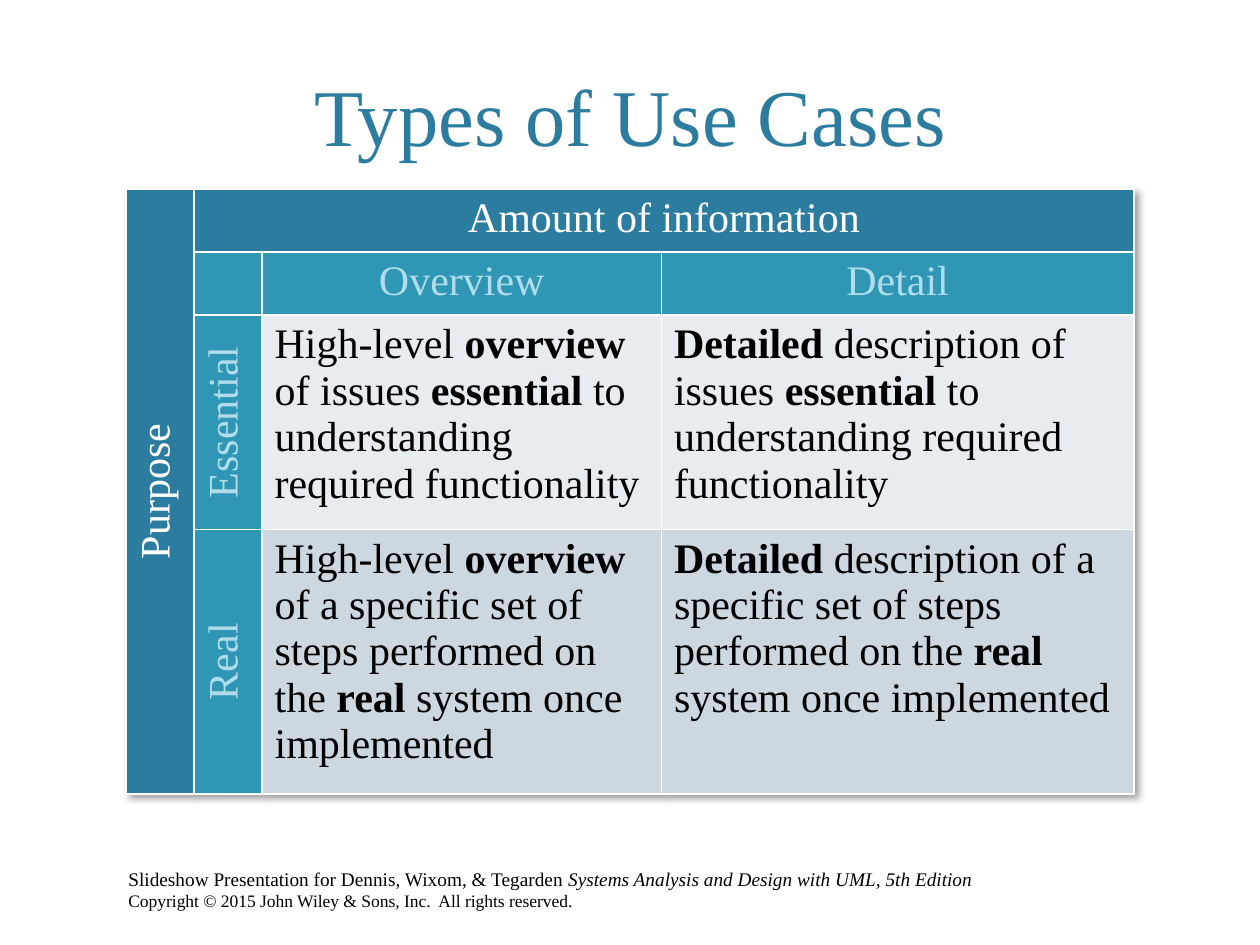
from lxml import etree
from pptx import Presentation
from pptx import util as u
from pptx.dml import color
from pptx.enum import text
from pptx.oxml import ns

W, H = 10, 7.5
FONT = "Times New Roman"
C = {"head": "2C7C9F", "sub": "2F97B5", "sub_text": "B1DDEB", "white": "FFFFFF",
     "black": "000000", "essential": "E8ECF0", "real": "CDD7DF"}
COLS = [0.54, 0.54, 3.17, 3.75]
ROWS = [0.46, 0.47, 1.57, 1.95]
HEAD = ("head", "white")
SUB = ("sub", "sub_text")
ESSENTIAL = ("essential", "black")
REAL = ("real", "black")
CELLS = [
    [("Purpose", HEAD), ("Amount of information", HEAD), ("", HEAD), ("", HEAD)],
    [("", HEAD), ("", SUB), ("Overview", SUB), ("Detail", SUB)],
    [("", HEAD), ("Essential", SUB),
     ("High-level *overview* of issues *essential* to understanding required functionality", ESSENTIAL),
     ("*Detailed* description of issues *essential* to understanding required functionality", ESSENTIAL)],
    [("", HEAD), ("Real", SUB),
     ("High-level *overview *of a specific set of steps performed on the *real* system once implemented", REAL),
     ("*Detailed* description of a specific set of steps performed on the *real* system once implemented", REAL)],
]


def rgb(name):
    return color.RGBColor.from_string(C[name])


def place(sp, x, y, w, h):
    sp.left, sp.top = u.Inches(x * W), u.Inches(y * H)
    sp.width, sp.height = u.Inches(w * W), u.Inches(h * H)


def add_run(p, words, size, col, bold=False, italic=False):
    r = p.add_run()
    r.text = words
    r.font.name, r.font.size = FONT, u.Pt(size)
    r.font.bold, r.font.italic = bold, italic
    r.font.color.rgb = rgb(col)


def add_title(s, words):
    sp = s.shapes.title
    place(sp, 0.06, 0.016, 0.88, 0.163)
    tf = sp.text_frame
    tf.vertical_anchor = text.MSO_ANCHOR.BOTTOM
    p = tf.paragraphs[0]
    p.alignment = text.PP_ALIGN.CENTER
    add_run(p, words, 46, "head")


def add_child(parent, tag, **attrs):
    return etree.SubElement(parent, ns.qn(tag), attrs)


def add_borders(cell):
    for side in "LRTB":
        ln = add_child(cell._tc.get_or_add_tcPr(), f"a:ln{side}", w=str(u.Pt(1)))
        add_child(add_child(ln, "a:solidFill"), "a:srgbClr", val=C["white"])


def add_table_shadow(tbl):
    effects = etree.Element(ns.qn("a:effectLst"))
    shadow = add_child(effects, "a:outerShdw", blurRad=str(u.Pt(4)), dist=str(u.Pt(3)),
                       dir="2700000", algn="tl", rotWithShape="0")
    clr = add_child(shadow, "a:srgbClr", val=C["black"])
    add_child(clr, "a:alpha", val="40000")
    tbl._tbl.tblPr.insert(0, effects)


def fill_cell(cell, words, style, vertical):
    fill, col = style
    add_borders(cell)
    cell.fill.solid()
    cell.fill.fore_color.rgb = rgb(fill)
    if vertical:
        cell._tc.get_or_add_tcPr().set("vert", "vert270")
    p = cell.text_frame.paragraphs[0]
    if style in (HEAD, SUB):
        p.alignment = text.PP_ALIGN.CENTER
    for i, part in enumerate(words.split("*")):
        if part:
            add_run(p, part, 24, col, bold=i % 2 == 1)


def add_use_case_table(s):
    frame = s.shapes.add_table(len(ROWS), len(COLS), u.Inches(0.1 * W), u.Inches(0.2 * H),
                               u.Inches(sum(COLS)), u.Inches(sum(ROWS)))
    tbl = frame.table
    for col, w in zip(tbl.columns, COLS):
        col.width = u.Inches(w)
    for row, h in zip(tbl.rows, ROWS):
        row.height = u.Inches(h)
    tbl.cell(0, 0).merge(tbl.cell(3, 0))
    tbl.cell(0, 1).merge(tbl.cell(0, 3))
    for i, row in enumerate(CELLS):
        for j, (words, style) in enumerate(row):
            fill_cell(tbl.cell(i, j), words, style, bool(words) and (j == 0 or (j == 1 and i > 1)))
    add_table_shadow(tbl)


def add_footer(s):
    sp = s.shapes.add_textbox(0, 0, 0, 0)
    place(sp, 0.092, 0.911, 0.761, 0.06)
    tf = sp.text_frame
    tf.word_wrap = True
    p = tf.paragraphs[0]
    add_run(p, "Slideshow Presentation for Dennis, Wixom, & Tegarden ", 11, "black")
    add_run(p, "Systems Analysis and Design with UML, 5th Edition", 11, "black", italic=True)
    add_run(tf.add_paragraph(), "Copyright © 2015 John Wiley & Sons, Inc.  All rights reserved.", 10, "black")


def main():
    prs = Presentation()
    prs.slide_width, prs.slide_height = u.Inches(W), u.Inches(H)
    s = prs.slides.add_slide(prs.slide_layouts[5])
    add_footer(s)
    add_title(s, "Types of Use Cases")
    add_use_case_table(s)
    prs.save("out.pptx")


if __name__ == "__main__":
    main()
